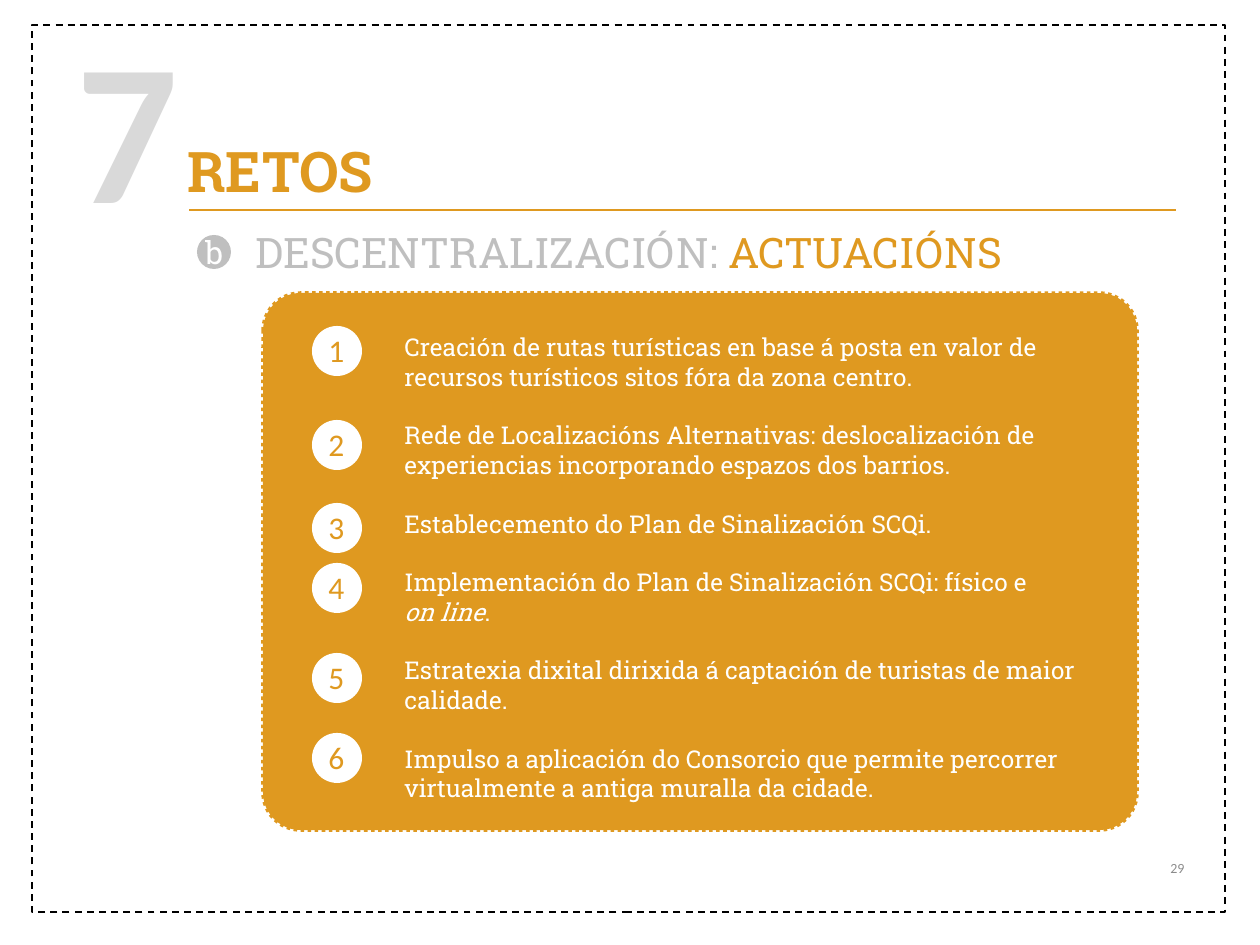
from pptx import Presentation
from pptx.dml.color import RGBColor
from pptx.enum.dml import MSO_LINE_DASH_STYLE as Dash
from pptx.enum.shapes import MSO_CONNECTOR, MSO_SHAPE as Shape
from pptx.enum.text import MSO_ANCHOR as Anchor, MSO_AUTO_SIZE as AutoSize, PP_ALIGN as Align
from pptx.oxml.ns import qn
from pptx.util import Pt
from lxml.etree import SubElement

EMU_PER_PX = 914400 / 126
COLORS = {
    "orange": "DF9920", "white": "FFFFFF", "black": "000000",
    "pale": "D9D9D9", "silver": "BFBFBF", "gray": "8C8C8C",
}
SLAB, SANS = "Roboto Slab", "Calibri"
BODY = {"name": SLAB, "size": Pt(14), "color": "white"}
DIGIT = {"name": SANS, "size": Pt(18), "color": "orange"}
SUBTITLE = {"name": SLAB, "size": Pt(24), "color": "silver"}
ACTION_GAP = Pt(16.75)
BADGE_TOPS = (326, 420, 503, 563, 653, 733)
ACTIONS = (
    ("Creación de rutas turísticas en base á posta en valor de recursos turísticos sitos fóra da zona centro.",),
    ("Rede de Localizacións Alternativas: deslocalización de experiencias incorporando espazos dos barrios.",),
    ("Establecemento do Plan de Sinalización SCQi.",),
    ("Implementación do Plan de Sinalización SCQi: físico e", "on line"),
    ("Estratexia dixital dirixida á captación de turistas de maior calidade.",),
    ("Impulso a aplicación do Consorcio que permite percorrer virtualmente a antiga muralla da cidade.",),
)


def px(*lengths):
    """Turn pixel lengths into EMU."""
    return [round(length * EMU_PER_PX) for length in lengths]


def rgb(name):
    """Look up a named colour."""
    return RGBColor.from_string(COLORS[name])


def add_run(paragraph, text, style):
    """Add a run whose font takes the values of a style dict."""
    run = paragraph.add_run()
    run.text = text
    for key, value in style.items():
        if key == "color":
            run.font.color.rgb = rgb(value)
        else:
            setattr(run.font, key, value)


def add_frame(slide, box, **settings):
    """Add a text box and return its text frame."""
    frame = slide.shapes.add_textbox(*px(*box)).text_frame
    settings = {"word_wrap": True, "auto_size": AutoSize.SHAPE_TO_FIT_TEXT, **settings}
    for key, value in settings.items():
        setattr(frame, key, value)
    return frame


def add_label(slide, box, *runs, align=None, **settings):
    """Add a one-paragraph text box from (text, style) runs."""
    paragraph = add_frame(slide, box, **settings).paragraphs[0]
    paragraph.alignment = align
    for text, style in runs:
        add_run(paragraph, text, style)


def style_line(line, color, width, dash=None):
    """Set the colour, width and dash of a line."""
    line.color.rgb = rgb(color)
    line.width = Pt(width)
    if dash:
        line.dash_style = dash


def add_figure(slide, kind, box, fill=None, line=None):
    """Add a preset shape with an optional fill and outline."""
    shape = slide.shapes.add_shape(kind, *px(*box))
    shape.shadow.inherit = False
    if fill:
        shape.fill.solid()
        shape.fill.fore_color.rgb = rgb(fill)
    else:
        shape.fill.background()
    if line:
        style_line(shape.line, *line)
    else:
        shape.line.fill.background()
    return shape


def add_rule(slide, *ends):
    """Add the thin line under the title."""
    rule = slide.shapes.add_connector(MSO_CONNECTOR.STRAIGHT, *px(*ends))
    style_line(rule.line, "orange", 0.75)
    SubElement(rule._element.spPr, qn("a:effectLst"))


def add_actions(slide, box):
    """Add the list of actions, spaced by one gap."""
    frame = add_frame(slide, box)
    for index, (text, *tail) in enumerate(ACTIONS):
        paragraph = frame.add_paragraph() if index else frame.paragraphs[0]
        if index:
            paragraph.space_before = ACTION_GAP
        add_run(paragraph, text, BODY)
        for italic_text in tail:
            paragraph = frame.add_paragraph()
            add_run(paragraph, italic_text, {**BODY, "italic": True})
            add_run(paragraph, ".", BODY)


def add_badge(slide, number, top):
    """Add a white disc with its number."""
    add_figure(slide, Shape.OVAL, (312, top, 50, 50), "white")
    add_label(slide, (316, top - 1, 42, 51), (str(number), DIGIT), word_wrap=False)


def main():
    """Build and save the slide."""
    presentation = Presentation()
    presentation.slide_width, presentation.slide_height = px(1260, 945)
    slide = presentation.slides.add_slide(presentation.slide_layouts[6])

    add_figure(slide, Shape.RECTANGLE, (32, 25, 1193, 887), line=("black", 1, Dash.DASH))
    add_label(slide, (903, 843, 294, 50), ("29", {"name": SANS, "size": Pt(8), "color": "gray"}),
              align=Align.RIGHT, vertical_anchor=Anchor.MIDDLE, auto_size=AutoSize.NONE)
    add_label(slide, (175, 130, 987, 80),
              ("RETOS", {"name": SLAB, "size": Pt(32), "bold": True, "color": "orange"}))
    add_label(slide, (64, -4, 139, 257),
              ("7", {"name": SANS, "size": Pt(115), "bold": True, "color": "pale"}))
    add_label(slide, (243, 220, 987, 63), ("DESCENTRALIZACIÓN: ", SUBTITLE),
              ("ACTUACIÓNS", {**SUBTITLE, "color": "orange"}))
    add_rule(slide, 189, 210, 1176, 210)
    add_figure(slide, Shape.OVAL, (197, 235, 34, 34), "silver")

    panel = add_figure(slide, Shape.ROUNDED_RECTANGLE, (263, 293, 874, 537), "orange",
                       ("orange", 2, Dash.ROUND_DOT))
    panel.adjustments[0] = 0.07
    add_actions(slide, (392, 326, 714, 488))
    for number, top in enumerate(BADGE_TOPS, 1):
        add_badge(slide, number, top)
    add_label(slide, (193, 227, 89, 50), ("b", {**BODY, "size": Pt(18)}))

    presentation.save("out.pptx")


if __name__ == "__main__":
    main()
